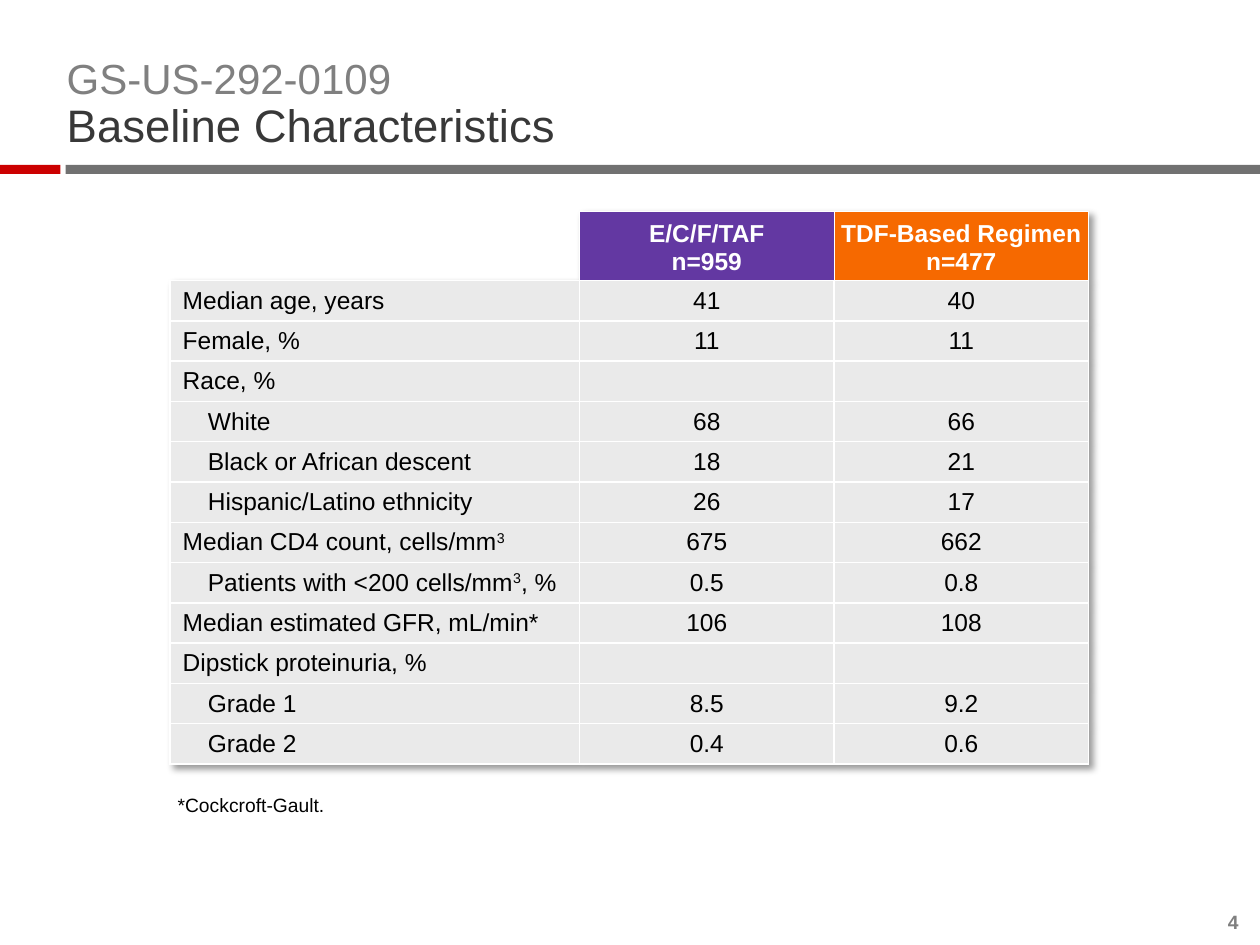
from lxml.etree import SubElement
from pptx import Presentation
from pptx.dml.color import RGBColor
from pptx.enum.shapes import MSO_SHAPE
from pptx.enum.text import MSO_ANCHOR as ANCHOR, PP_ALIGN as ALIGN
from pptx.oxml import parse_xml
from pptx.oxml.ns import nsdecls, qn
from pptx.util import Inches, Pt


def rgb(value):
    return RGBColor.from_string(value)


def add_run(p, text, size, color, bold=False):
    r = p.add_run()
    r.text = text
    r.font.name = "Arial"
    r.font.size = Pt(size)
    r.font.bold = bold
    r.font.color.rgb = rgb(color)
    return r


prs = Presentation()
prs.slide_width, prs.slide_height = Inches(10), Inches(7.5)
s = prs.slides.add_slide(prs.slide_layouts[6])

# Rule under the title
for left, width, color in [(0.52, 9.48, "717171"), (0, 0.48, "CC0000")]:
    sp = s.shapes.add_shape(MSO_SHAPE.RECTANGLE, Inches(left), Inches(1.31),
                            Inches(width), Inches(0.07))
    sp.shadow.inherit = False
    sp.fill.solid()
    sp.fill.fore_color.rgb = rgb(color)
    sp.line.fill.background()

# Title, footnote and page number: box, anchor, alignment, line spacing, runs
texts = [
    ((0.53, 0.47, 9, 0.74), ANCHOR.BOTTOM, ALIGN.LEFT, 0.9,
     [("GS-US-292-0109", 24, "808080"), ("Baseline Characteristics", 26, "383838")]),
    ((1.41, 6.3, 8.5, 0.5), ANCHOR.TOP, ALIGN.LEFT, 1,
     [("*Cockcroft-Gault.", 11, "000000")]),
    ((9.56, 7.23, 0.27, 0.18), ANCHOR.BOTTOM, ALIGN.RIGHT, 1,
     [("4", 11, "7F7F7F", True)]),
]
for box, anchor, align, spacing, runs in texts:
    tf = s.shapes.add_textbox(*map(Inches, box)).text_frame
    tf.word_wrap = True
    tf.vertical_anchor = anchor
    tf.margin_left = tf.margin_right = tf.margin_top = tf.margin_bottom = 0
    p = tf.paragraphs[0]
    p.alignment = align
    p.line_spacing = spacing
    for i, run in enumerate(runs):
        if i:
            p.add_line_break()
        add_run(p, *run)

# Table rows: indent level, label, values; ^ surrounds a superscript
rows = [
    (0, "", "E/C/F/TAF\nn=959", "TDF-Based Regimen\nn=477"),
    (0, "Median age, years", "41", "40"),
    (0, "Female, %", "11", "11"),
    (0, "Race, %", "", ""),
    (1, "White", "68", "66"),
    (1, "Black or African descent", "18", "21"),
    (1, "Hispanic/Latino ethnicity", "26", "17"),
    (0, "Median CD4 count, cells/mm^3^", "675", "662"),
    (1, "Patients with <200 cells/mm^3^, %", "0.5", "0.8"),
    (0, "Median estimated GFR, mL/min*", "106", "108"),
    (0, "Dipstick proteinuria, %", "", ""),
    (1, "Grade 1", "8.5", "9.2"),
    (1, "Grade 2", "0.4", "0.6"),
]
header_fills = [None, "6338A2", "F66900"]

table = s.shapes.add_table(len(rows), 3, Inches(1.35), Inches(1.68),
                           Inches(7.3), Inches(4.38)).table
table.first_row = table.horz_banding = False
for col, width in zip(table.columns, [3.25, 2.02, 2.02]):
    col.width = Inches(width)

# Soft shadow behind the table
table._tbl.tblPr.insert(0, parse_xml(
    f'<a:effectLst {nsdecls("a")}><a:outerShdw blurRad="50800" dist="38100" '
    'dir="2700000" algn="tl" rotWithShape="0"><a:srgbClr val="000000">'
    '<a:alpha val="40000"/></a:srgbClr></a:outerShdw></a:effectLst>'))

for i, (level, *values) in enumerate(rows):
    header = i == 0
    table.rows[i].height = Inches(0.54 if header else 0.32)
    for j, value in enumerate(values):
        cell = table.cell(i, j)
        cell.vertical_anchor = ANCHOR.BOTTOM if header else ANCHOR.MIDDLE
        cell.margin_left = cell.margin_right = Inches(0.05 if header else 0.1)
        cell.margin_top = cell.margin_bottom = Inches(0.04)

        # White borders, left out around the empty corner
        tcPr = cell._tc.get_or_add_tcPr()
        for side in ("lnL", "lnR", "lnT", "lnB"):
            width = 0 if header and j == 0 else Pt(0.75 if header else 1)
            ln = SubElement(tcPr, qn(f"a:{side}"), w=str(width))
            if width:
                SubElement(SubElement(ln, qn("a:solidFill")), qn("a:srgbClr"), val="FFFFFF")
            else:
                SubElement(ln, qn("a:noFill"))

        fill = header_fills[j] if header else "EAEAEA"
        if fill:
            cell.fill.solid()
            cell.fill.fore_color.rgb = rgb(fill)
        else:
            cell.fill.background()

        # Cell text
        tf = cell.text_frame
        for n, line in enumerate(value.split("\n")):
            p = tf.add_paragraph() if n else tf.paragraphs[0]
            p.alignment = ALIGN.CENTER if j else ALIGN.LEFT
            if level and j == 0:
                p._p.get_or_add_pPr().set("marL", str(Inches(0.2)))
            if not line:
                SubElement(p._p, qn("a:endParaRPr"), sz="1400")
                continue
            for k, part in enumerate(line.split("^")):
                if part:
                    r = add_run(p, part, 14, "FFFFFF" if header else "000000", header)
                    if k % 2:
                        r.font._element.set("baseline", "30000")

# Save
prs.save("out.pptx")
